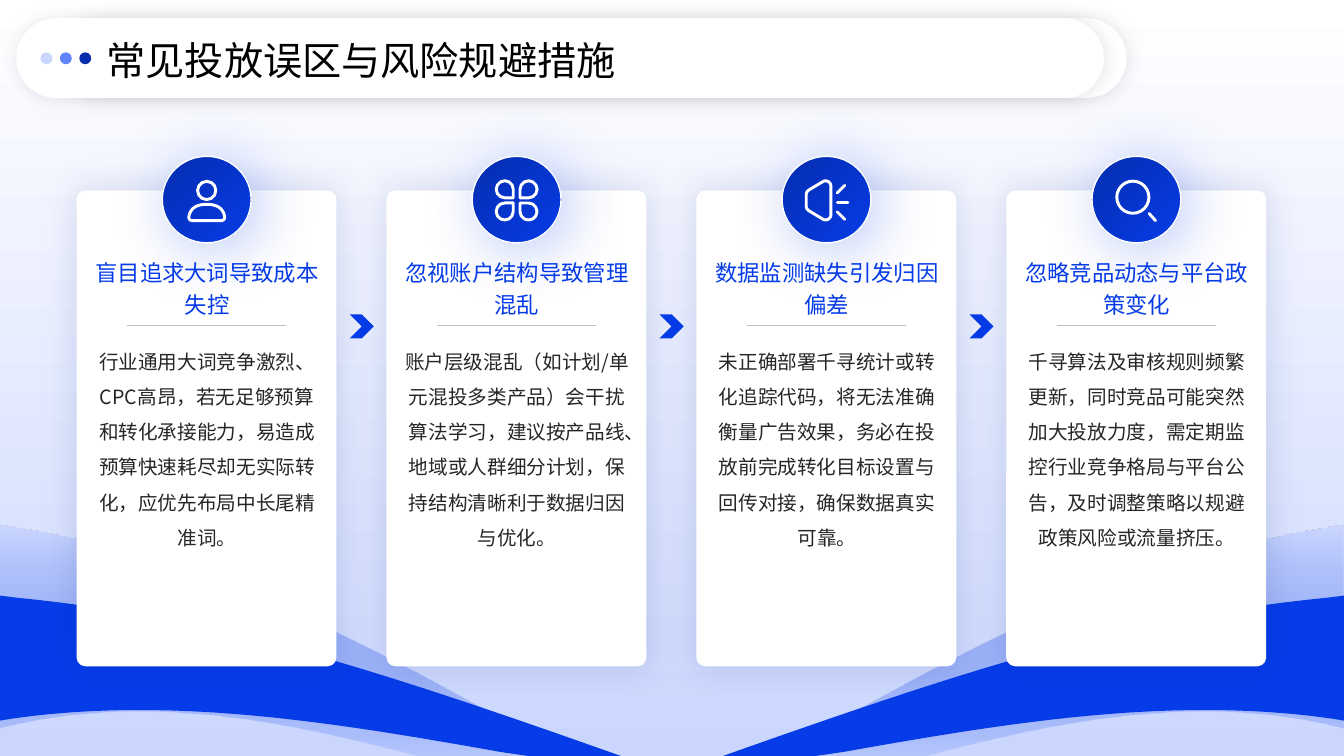
"""Build the slide on common ad placement mistakes and how to avoid them."""
from lxml.etree import SubElement
from pptx import Presentation
from pptx.dml.color import RGBColor
from pptx.enum.shapes import MSO_CONNECTOR as Link, MSO_SHAPE as Kind
from pptx.enum.text import MSO_ANCHOR as Anchor, MSO_AUTO_SIZE as Fit, PP_ALIGN as Align
from pptx.oxml.ns import qn
from pptx.util import Cm, Pt

TITLE = "常见投放误区与风险规避措施"
CARDS = [
    ("盲目追求大词导致成本失控",
     "行业通用大词竞争激烈、CPC高昂，若无足够预算和转化承接能力，易造成预算快速耗尽却无实际转化，应优先布局中长尾精准词。"),
    ("忽视账户结构导致管理混乱",
     "账户层级混乱（如计划/单元混投多类产品）会干扰算法学习，建议按产品线、地域或人群细分计划，保持结构清晰利于数据归因与优化。"),
    ("数据监测缺失引发归因偏差",
     "未正确部署千寻统计或转化追踪代码，将无法准确衡量广告效果，务必在投放前完成转化目标设置与回传对接，确保数据真实可靠。"),
    ("忽略竞品动态与平台政策变化",
     "千寻算法及审核规则频繁更新，同时竞品可能突然加大投放力度，需定期监控行业竞争格局与平台公告，及时调整策略以规避政策风险或流量挤压。"),
]
PERSON = [
    ("ring", 0, -0.25, 0.46),
    ("path", [(0, 0.1), (0.28, 0.1, 0.42, 0.22, 0.45, 0.41),
              (0.46, 0.47, 0.42, 0.51, 0.36, 0.51), (-0.36, 0.51),
              (-0.42, 0.51, -0.46, 0.47, -0.45, 0.41),
              (-0.42, 0.22, -0.28, 0.1, 0, 0.1)]),
]
CLOVER = [("drop", x, y, 0.43, turn) for x, y, turn in
          [(-0.3, -0.28, 90), (0.3, -0.28, 180), (-0.3, 0.28, 0), (0.3, 0.28, 270)]]
HORN = [
    ("path", [(0.11, -0.36), (0.11, 0.36), (0.11, 0.46, 0, 0.52, -0.08, 0.48),
              (-0.43, 0.27), (-0.48, 0.24, -0.51, 0.2, -0.51, 0.15), (-0.51, -0.15),
              (-0.51, -0.2, -0.48, -0.24, -0.43, -0.27), (-0.08, -0.48),
              (0, -0.52, 0.11, -0.46, 0.11, -0.36)]),
    ("line", 0.27, -0.19, 0.46, -0.38),
    ("line", 0.27, 0.05, 0.54, 0.05),
    ("line", 0.27, 0.29, 0.46, 0.48),
]
LENS = [("ring", -0.09, -0.08, 0.81), ("line", 0.32, 0.33, 0.48, 0.51)]
ICONS = [PERSON, CLOVER, HORN, LENS]
BACK = [(0, 13.21), (0.41, 13.28), (4.98, 14.05, 8.41, 15.65, 14.43, 19.1),
        (15.65, 19.81), (13.31, 19.81), (12.62, 19.61),
        (8.46, 18.42, 4.34, 17.32, 0.3, 18.26), (0, 18.34)]
FRONT = [(0, 15.01), (0.41, 15.06), (4.98, 15.52, 8.41, 16.51, 14.43, 18.62),
         (15.65, 19.05), (13.31, 19.05), (12.62, 18.95),
         (8.46, 18.21, 4.34, 17.53, 0.3, 18.11), (0, 18.16)]

WHITE = RGBColor(0xFF, 0xFF, 0xFF)
BLACK = RGBColor(0, 0, 0)
INK = RGBColor(0x26, 0x26, 0x26)
GREY = RGBColor(0xBF, 0xBF, 0xBF)
PALE = RGBColor(0xCA, 0xD6, 0xFE)
MID = RGBColor(0x60, 0x85, 0xFB)
BLUE = RGBColor(0x06, 0x3C, 0xE8)
NAVY = RGBColor(0x05, 0x2D, 0xAE)
DEEP = RGBColor(0x03, 0x1E, 0x74)
FONT = "Noto Sans CJK SC"
WIDE, HIGH = 33.87, 19.05
LEFT, STEP, TOP = 1.93, 7.81, 4.8
STROKE = 2.1

deck = Presentation()
deck.slide_width, deck.slide_height = Cm(WIDE), Cm(HIGH)
slide = deck.slides.add_slide(deck.slide_layouts[5])
shapes = slide.shapes


def put(item, values):
    """Set each named value on the item."""
    for name, value in values.items():
        setattr(item, name, value)


def tint(root, color, alpha=100):
    """Add a colour with its opacity in percent."""
    node = SubElement(root, qn("a:srgbClr"), val=str(color))
    if alpha < 100:
        SubElement(node, qn("a:alpha"), val=str(alpha * 1000))


def paint(shape, fill=None, line=None, width=1):
    """Give a shape a plain fill and line and no shadow."""
    shape.shadow.inherit = False
    for part, color in ((shape.fill, fill), (shape.line.fill, line)):
        if color is None:
            part.background()
        else:
            part.solid()
            part.fore_color.rgb = color
    if line is not None:
        shape.line.width = Pt(width)
    return shape


def blend(shape, stops, angle):
    """Swap the plain fill for a linear gradient."""
    props = shape._element.spPr
    plain = props.find(qn("a:solidFill"))
    grad = SubElement(props, qn("a:gradFill"), rotWithShape="1")
    props.replace(plain, grad)
    group = SubElement(grad, qn("a:gsLst"))
    for place, color, alpha in stops:
        tint(SubElement(group, qn("a:gs"), pos=str(place * 1000)), color, alpha)
    SubElement(grad, qn("a:lin"), ang=str(angle * 60000), scaled="0")


def shade(shape, color, alpha, blur, dist=0, angle=0):
    """Add a soft outer shadow."""
    group = shape._element.spPr.find(qn("a:effectLst"))
    tint(SubElement(group, qn("a:outerShdw"), blurRad=str(Pt(blur)), dist=str(Pt(dist)),
                    dir=str(angle * 60000), algn="ctr", rotWithShape="0"), color, alpha)


def add(kind, x, y, w, h, fill=None, line=None, width=1):
    """Add a painted preset shape."""
    return paint(shapes.add_shape(kind, Cm(x), Cm(y), Cm(w), Cm(h)), fill, line, width)


def trace(path, place):
    """Turn corners and cubic curves into placed points."""
    spots = [path[0]]
    for step in path[1:]:
        if len(step) == 2:
            spots.append(step)
            continue
        knots = [spots[-1], step[:2], step[2:4], step[4:]]
        for t in (n / 24 for n in range(1, 25)):
            parts = ((1 - t) ** 3, 3 * t * (1 - t) ** 2, 3 * t * t * (1 - t), t ** 3)
            spots.append(tuple(sum(p * k[i] for p, k in zip(parts, knots)) for i in (0, 1)))
    return [tuple(Cm(v) for v in place(*spot)) for spot in spots]


def outline(path, place, **look):
    """Add a painted closed outline."""
    spots = trace(path, place)
    form = shapes.build_freeform(*spots[0], scale=1.0)
    form.add_line_segments(spots[1:], close=True)
    return paint(form.convert_to_shape(), **look)


def rule(x1, y1, x2, y2, color, width):
    """Add a straight line without a shadow."""
    line = shapes.add_connector(Link.STRAIGHT, Cm(x1), Cm(y1), Cm(x2), Cm(y2))
    line.line.color.rgb = color
    line.line.width = Pt(width)
    SubElement(line._element.spPr, qn("a:effectLst"))
    return line


def write(box, text, size, color, space, align, anchor):
    """Fill a box with one formatted paragraph."""
    frame = box.text_frame
    put(frame, {"text": text, "word_wrap": True, "auto_size": Fit.NONE,
                "vertical_anchor": anchor, "margin_left": 0, "margin_right": 0,
                "margin_top": 0, "margin_bottom": 0})
    para = frame.paragraphs[0]
    put(para, {"alignment": align, "line_spacing": space, "space_before": Pt(0)})
    run = para.runs[0]
    put(run.font, {"size": Pt(size), "name": FONT, "bold": False})
    run.font.color.rgb = color
    SubElement(run.font._element, qn("a:ea"), typeface=FONT)


def draw(icon, cx, cy):
    """Draw an icon in white strokes around a centre."""
    pen = {"line": WHITE, "width": STROKE}
    for kind, *data in icon:
        if kind == "path":
            outline(data[0], lambda x, y: (cx + x, cy + y), **pen)
        elif kind == "line":
            x1, y1, x2, y2 = data
            line = rule(cx + x1, cy + y1, cx + x2, cy + y2, WHITE, STROKE)
            line.line._get_or_add_ln().set("cap", "rnd")
        else:
            x, y, size, *turn = data
            form = Kind.TEAR if kind == "drop" else Kind.OVAL
            mark = add(form, cx + x - size / 2, cy + y - size / 2, size, size, **pen)
            mark.rotation = turn[0] if turn else 0


def label(x, y, w, h, *look):
    """Add a text box."""
    write(shapes.add_textbox(Cm(x), Cm(y), Cm(w), Cm(h)), *look)


blend(add(Kind.RECTANGLE, 0, 0, WIDE, HIGH, WHITE), [(0, WHITE, 100), (100, PALE, 100)], 90)
for wave in (BACK, FRONT):
    for place in (lambda x, y: (x, y), lambda x, y: (WIDE - x, y)):
        form = outline(wave, place, fill=BLUE)
        if wave is BACK:
            blend(form, [(1, PALE, 100), (99, BLUE, 0)], 90)

for i, ((head, body), icon) in enumerate(zip(CARDS, ICONS)):
    x = LEFT + i * STEP
    card = add(Kind.ROUNDED_RECTANGLE, x, TOP, 6.55, 11.99, WHITE)
    card.adjustments[0] = 0.034
    shade(card, DEEP, 14, 26, 0, 45)
    label(x + 0.38, 8.51, 5.82, 7.7, body, 14, INK, 1.5, Align.CENTER, Anchor.TOP)
    label(x + 0.38, 6.38, 5.82, 1.63, head, 16, BLUE, 1.2, Align.CENTER, Anchor.BOTTOM)
    rule(x + 1.27, 8.2, x + 5.28, 8.2, GREY, 1)
    disc = add(Kind.OVAL, x + 2.16, 3.94, 2.24, 2.18, BLUE, WHITE)
    blend(disc, [(0, NAVY, 100), (100, BLUE, 100)], 45)
    shade(disc, BLUE, 27, 44, 7, 38)
    draw(icon, x + 3.28, 5.05)
    if i < len(CARDS) - 1:
        add(Kind.CHEVRON, x + 6.88, 7.92, 0.61, 0.61, BLUE)

for x, w in ((1.57, 26.82), (0.41, 27.41)):
    bar = add(Kind.ROUNDED_RECTANGLE, x, 0.46, w, 2.01, WHITE)
    bar.adjustments[0] = 0.5
    shade(bar, BLACK, 10, 13)
title = shapes.title
put(title, {"left": Cm(2.69), "top": Cm(0.86), "width": Cm(24.43), "height": Cm(1.19)})
write(title, TITLE, 28, BLACK, 1.1, Align.LEFT, Anchor.MIDDLE)
shapes._spTree.append(title._element)
for i, color in enumerate((PALE, MID, NAVY)):
    add(Kind.OVAL, 1.02 + i * 0.49, 1.32, 0.3, 0.3, color)

deck.save("out.pptx")
